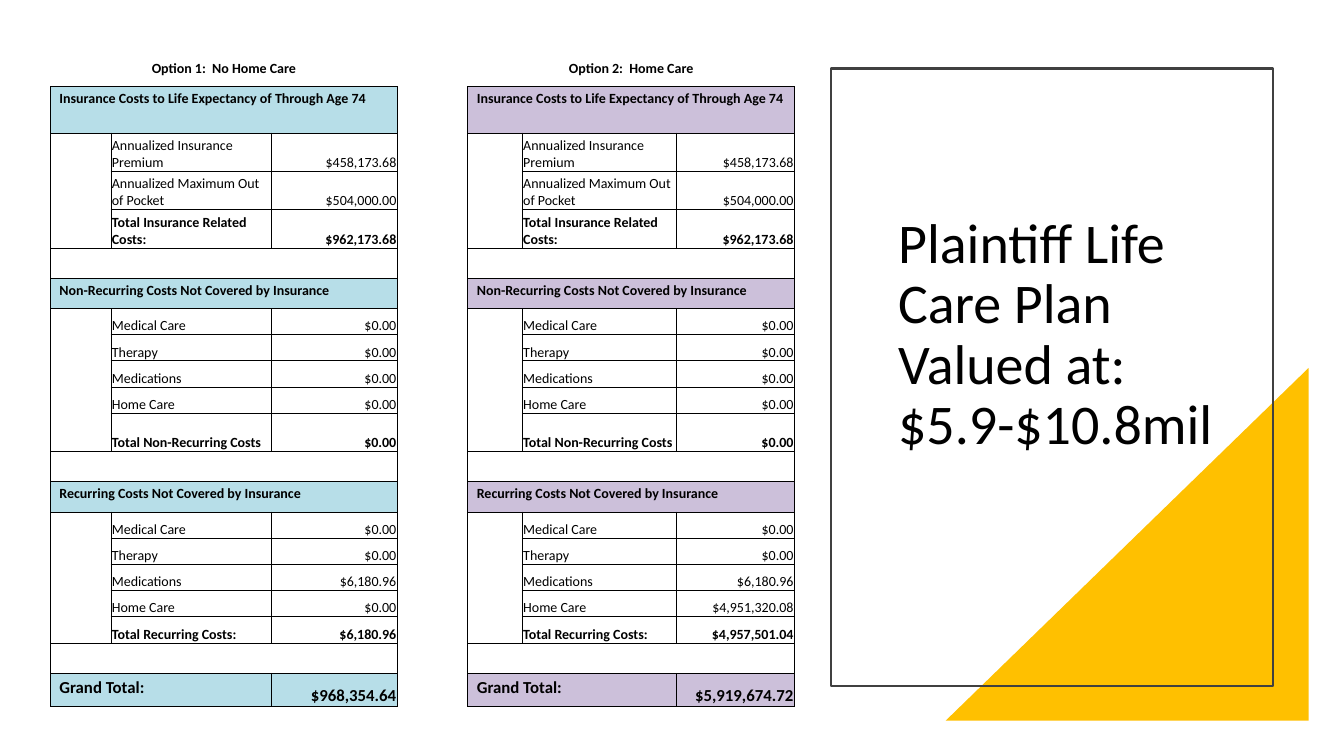
"""Build the life care plan cost comparison slide."""
from lxml import etree
from pptx import Presentation
from pptx.dml.color import RGBColor
from pptx.enum.shapes import MSO_SHAPE
from pptx.enum.text import MSO_ANCHOR, PP_ALIGN
from pptx.oxml.ns import qn
from pptx.util import Inches, Pt

RECT, TRIANGLE = MSO_SHAPE.RECTANGLE, MSO_SHAPE.RIGHT_TRIANGLE
TOP, BOTTOM = MSO_ANCHOR.TOP, MSO_ANCHOR.BOTTOM
LEFT, CENTER, RIGHT = PP_ALIGN.LEFT, PP_ALIGN.CENTER, PP_ALIGN.RIGHT

FONT = "Calibri"
COLORS = {"black": "000000", "frame": "404040", "gold": "FFC000",
          "blue": "B7DEE8", "purple": "CCC0DA"}
TITLE = "Plaintiff Life Care Plan Valued at: $5.9-$10.8mil"
OPTIONS = [("Option 1:  No Home Care", 0, "blue"),
           ("Option 2:  Home Care", 4, "purple")]
SECTIONS = [
    ("Insurance Costs to Life Expectancy of Through Age 74", 0.46, [
        ("Annualized Insurance Premium", 0.38, "$458,173.68", "$458,173.68"),
        ("Annualized Maximum Out of Pocket", 0.38, "$504,000.00", "$504,000.00"),
        ("Total Insurance Related Costs:", 0.38, "$962,173.68", "$962,173.68")]),
    ("Non-Recurring Costs Not Covered by Insurance", 0.3, [
        ("Medical Care", 0.26, "$0.00", "$0.00"),
        ("Therapy", 0.26, "$0.00", "$0.00"),
        ("Medications", 0.26, "$0.00", "$0.00"),
        ("Home Care", 0.26, "$0.00", "$0.00"),
        ("Total Non-Recurring Costs", 0.38, "$0.00", "$0.00")]),
    ("Recurring Costs Not Covered by Insurance", 0.3, [
        ("Medical Care", 0.26, "$0.00", "$0.00"),
        ("Therapy", 0.26, "$0.00", "$0.00"),
        ("Medications", 0.26, "$6,180.96", "$6,180.96"),
        ("Home Care", 0.26, "$0.00", "$4,951,320.08"),
        ("Total Recurring Costs:", 0.26, "$6,180.96", "$4,957,501.04")]),
]
GRAND_TOTAL = ("Grand Total:", 0.33, "$968,354.64", "$5,919,674.72")
COL_WIDTHS = [0.6, 1.59, 1.25, 0.7, 0.54, 1.53, 1.17]
GAP_COL = 3
SPACER = 0.3
WIDE_INSETS = (0.09, 0.04, 0.09, 0.04)
TIGHT_INSETS = (0.01, 0.01, 0.01, 0)


def rgb(name):
    return RGBColor.from_string(COLORS[name])


def add_run(p, text, size, bold=False):
    r = p.add_run()
    r.text = text
    r.font.name, r.font.size, r.font.bold = FONT, Pt(size), bold
    r.font.color.rgb = rgb("black")


def write(cell, text, insets, align=LEFT, anchor=TOP, size=10, bold=True):
    cell.margin_left, cell.margin_top, cell.margin_right, cell.margin_bottom = map(
        Inches, insets)
    cell.vertical_anchor = anchor
    p = cell.text_frame.paragraphs[0]
    p.alignment = align
    add_run(p, text, size, bold)


def write_amount(cell, text, size=10, bold=True):
    write(cell, text, TIGHT_INSETS, RIGHT, BOTTOM, size, bold)


def paint(cell, color):
    cell.fill.solid()
    cell.fill.fore_color.rgb = rgb(color)


def set_borders(cell, sides):
    tc_pr = cell._tc.get_or_add_tcPr()
    for i, side in enumerate("LRTB"):
        ln = etree.Element(qn(f"a:ln{side}"), w=str(Pt(0.5)))
        if side in sides:
            fill = etree.SubElement(ln, qn("a:solidFill"))
            etree.SubElement(fill, qn("a:srgbClr"), val=COLORS["black"])
        else:
            etree.SubElement(ln, qn("a:noFill"))
        tc_pr.insert(i, ln)


def add_cost_table(slide):
    heights = [0.3]
    for _, height, items in SECTIONS:
        heights += [height, *(item[1] for item in items), SPACER]
    heights.append(GRAND_TOTAL[1])
    table = slide.shapes.add_table(
        len(heights), len(COL_WIDTHS), Inches(0.5), Inches(0.56),
        Inches(sum(COL_WIDTHS)), Inches(sum(heights))).table
    table.first_row = table.horz_banding = False
    for col, width in zip(table.columns, COL_WIDTHS):
        col.width = Inches(width)
    for row, height in zip(table.rows, heights):
        row.height = Inches(height)

    for i in range(len(heights)):
        for j in range(len(COL_WIDTHS)):
            cell = table.cell(i, j)
            cell.fill.background()
            cell.margin_top = cell.margin_bottom = Inches(0.04)
            cell.text_frame.paragraphs[0]._p.get_or_add_endParaRPr().set("sz", "1000")
            if j == GAP_COL:
                set_borders(cell, "LR" if i else "")
            else:
                set_borders(cell, "LRTB" if i else "B")

    for n, (option, left, color) in enumerate(OPTIONS):
        def merge(top, bottom, right):
            cell = table.cell(top, left)
            cell.merge(table.cell(bottom, right))
            return cell

        write(merge(0, 0, left + 2), option, WIDE_INSETS, CENTER)
        row = 1
        for heading, _, items in SECTIONS:
            head = merge(row, row, left + 2)
            write(head, heading, WIDE_INSETS)
            paint(head, color)
            merge(row + 1, row + len(items), left)
            for k, (label, _, *amounts) in enumerate(items, 1):
                total = k == len(items)
                write(table.cell(row + k, left + 1), label, TIGHT_INSETS,
                      anchor=BOTTOM, bold=total)
                write_amount(table.cell(row + k, left + 2), amounts[n], bold=total)
            row += len(items) + 1
            merge(row, row, left + 2)
            row += 1
        label, _, *amounts = GRAND_TOTAL
        head, amount = merge(row, row, left + 1), table.cell(row, left + 2)
        write(head, label, WIDE_INSETS, size=12)
        write_amount(amount, amounts[n], size=12)
        paint(head, color)
        paint(amount, color)


def add_title_panel(slide):
    sp = slide.shapes.add_shape(
        TRIANGLE, Inches(9.38), Inches(3.65), Inches(3.6), Inches(3.5))
    sp.shadow.inherit = False
    sp.fill.solid()
    sp.fill.fore_color.rgb = rgb("gold")
    sp.line.fill.background()
    sp._element.spPr.find(qn("a:xfrm")).set("flipH", "1")

    sp = slide.shapes.add_shape(
        RECT, Inches(8.24), Inches(0.68), Inches(4.39), Inches(6.13))
    sp.shadow.inherit = False
    sp.fill.background()
    sp.line.color.rgb = rgb("frame")
    sp.line.width = Pt(1.5)

    tf = slide.shapes.add_textbox(
        Inches(8.81), Inches(1.16), Inches(3.5), Inches(3.42)).text_frame
    tf.word_wrap = True
    tf.vertical_anchor = BOTTOM
    p = tf.paragraphs[0]
    p.line_spacing = 0.9
    add_run(p, TITLE, 40)


def main():
    prs = Presentation()
    prs.slide_width, prs.slide_height = Inches(13.33), Inches(7.5)
    slide = prs.slides.add_slide(prs.slide_layouts[6])
    add_title_panel(slide)
    add_cost_table(slide)
    prs.save("out.pptx")


if __name__ == "__main__":
    main()
